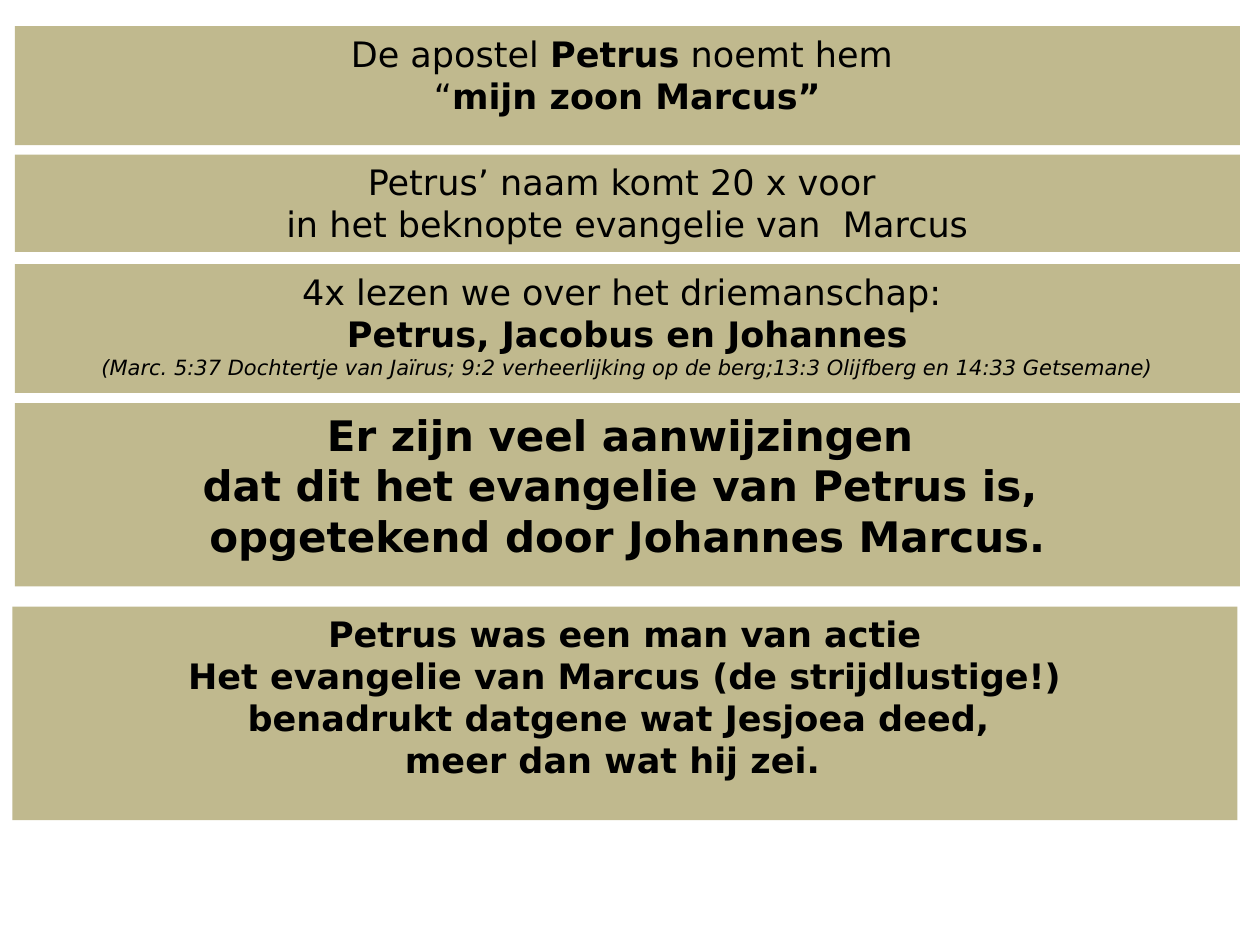
from dataclasses import dataclass

from pptx import Presentation
from pptx.dml.color import RGBColor
from pptx.enum.shapes import MSO_SHAPE
from pptx.enum.text import MSO_ANCHOR, PP_ALIGN
from pptx.util import Pt


@dataclass(frozen=True)
class Theme:
    """Colours, font and type sizes of the slide."""
    fill: RGBColor = RGBColor(0xC0, 0xB9, 0x8E)
    ink: RGBColor = RGBColor(0, 0, 0)
    font: str = "DejaVu Sans"
    note: int = 12
    body: int = 20
    key: int = 24


@dataclass(frozen=True)
class Box:
    """A region in points."""
    left: float
    top: float
    width: float
    height: float


THEME = Theme()
LEFT, WIDTH = 8.6, 700


def span(text, size=THEME.body, bold=False, italic=False):
    """Describe one run of text."""
    return text, size, bold, italic


def bold(text, size=THEME.body):
    """Describe one bold run."""
    return span(text, size, bold=True)


def add_run(para, text, size, bold, italic):
    """Append one formatted run to a paragraph."""
    run = para.add_run()
    run.text = text
    font = run.font
    font.name, font.size = THEME.font, Pt(size)
    font.bold, font.italic = bold, italic
    font.color.rgb = THEME.ink


def add_panel(slide, box, lines):
    """Place a filled panel with centred lines in the box."""
    panel = slide.shapes.add_shape(
        MSO_SHAPE.RECTANGLE,
        Pt(box.left), Pt(box.top), Pt(box.width), Pt(box.height))
    panel.shadow.inherit = False
    panel.fill.solid()
    panel.fill.fore_color.rgb = THEME.fill
    panel.line.fill.background()
    frame = panel.text_frame
    frame.word_wrap = True
    frame.vertical_anchor = MSO_ANCHOR.TOP
    for index, line in enumerate(lines):
        para = frame.add_paragraph() if index else frame.paragraphs[0]
        para.alignment = PP_ALIGN.CENTER
        for part in line:
            add_run(para, *part)


PANELS = [
    (Box(LEFT, 14.9, WIDTH, 68), [
        [span("De apostel "), bold("Petrus"), span(" noemt hem ")],
        [span("“"), bold("mijn zoon Marcus”")],
    ]),
    (Box(LEFT, 88.4, WIDTH, 55.6), [
        [span("Petrus’ naam komt 20 x voor ")],
        [span("in het beknopte evangelie van  Marcus")],
    ]),
    (Box(LEFT, 150.9, WIDTH, 73.7), [
        [span("4x lezen we over het driemanschap: ")],
        [bold("Petrus, Jacobus en Johannes")],
        [span("(Marc. 5:37 Dochtertje van Jaïrus; 9:2 verheerlijking op de "
              "berg;13:3 Olijfberg en 14:33 Getsemane)",
              THEME.note, italic=True)],
    ]),
    (Box(LEFT, 230.4, WIDTH, 104.7), [
        [bold("Er zijn veel aanwijzingen ", THEME.key)],
        [bold("dat dit het evangelie van Petrus is, ", THEME.key)],
        [bold("opgetekend door Johannes Marcus.", THEME.key)],
    ]),
    (Box(7.1, 346.7, WIDTH, 122), [
        [bold("Petrus was een man van actie")],
        [bold("Het evangelie van Marcus (de strijdlustige!)")],
        [bold("benadrukt datgene wat Jesjoea deed, ")],
        [bold("meer dan wat hij zei.  ")],
    ]),
]


def main():
    """Build and save the slide."""
    deck = Presentation()
    deck.slide_width, deck.slide_height = Pt(720), Pt(540)
    slide = deck.slides.add_slide(deck.slide_layouts[6])
    for box, lines in PANELS:
        add_panel(slide, box, lines)
    deck.save("out.pptx")


if __name__ == "__main__":
    main()
